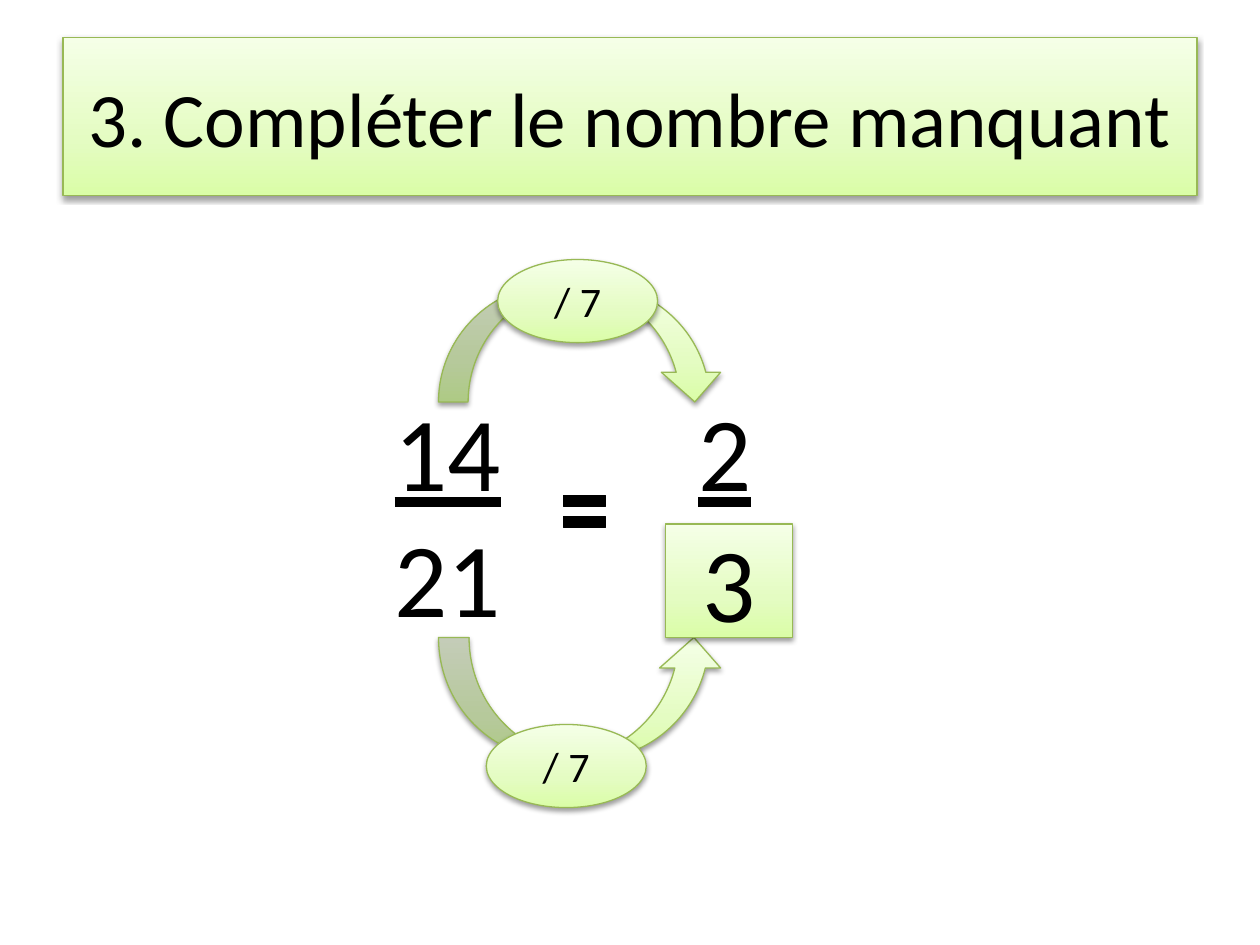
from copy import deepcopy

from lxml import etree
from pptx import Presentation
from pptx.dml.color import RGBColor
from pptx.enum import shapes, text
from pptx.oxml.ns import qn
from pptx.util import Pt

BLACK = RGBColor(0, 0, 0)
EDGE = RGBColor(0x98, 0xB9, 0x55)
GREENS = [
    (0, RGBColor(0xDA, 0xFD, 0xA7)),
    (0.35, RGBColor(0xE4, 0xFC, 0xC2)),
    (1, RGBColor(0xF5, 0xFF, 0xE7)),
]
FONT = "Calibri"
KIND = shapes.MSO_SHAPE


def shade(shape):
    """Give a shape the green gradient, thin edge and soft shadow."""
    shape.fill.gradient()
    shape.fill.gradient_angle = 90
    props = shape._element.spPr
    first = props.find(qn("a:gradFill")).find(qn("a:gsLst"))[0]
    first.addnext(deepcopy(first))
    for stop, (place, color) in zip(shape.fill.gradient_stops, GREENS):
        stop.position = place
        stop.color.rgb = color
    shape.line.color.rgb = EDGE
    shape.line.width = Pt(0.75)
    shape.shadow.inherit = False
    glow = etree.SubElement(
        props.find(qn("a:effectLst")), qn("a:outerShdw"),
        blurRad=str(Pt(3.1)), dist=str(Pt(1.6)), dir="5400000", rotWithShape="0")
    tint = etree.SubElement(glow, qn("a:srgbClr"), val=str(BLACK))
    etree.SubElement(tint, qn("a:alpha"), val="38000")


def write(shape, lines, size, under=False):
    """Write centred lines; the first may be underlined."""
    frame = shape.text_frame
    frame.word_wrap = True
    frame.text = "\n".join(lines)
    for row, para in enumerate(frame.paragraphs):
        para.alignment = text.PP_ALIGN.CENTER
        look = {"name": FONT, "size": Pt(size), "underline": under and row == 0}
        for key, value in look.items():
            setattr(para.runs[0].font, key, value)
        para.runs[0].font.color.rgb = BLACK


def draw(parent, kind, box, label=None, size=24):
    shape = parent.add_shape(kind, *map(Pt, box))
    shade(shape)
    if label:
        write(shape, [label], size)


def head(slide, box, label):
    title = slide.shapes.title
    for key, value in zip(("left", "top", "width", "height"), box):
        setattr(title, key, Pt(value))
    shade(title)
    title.text_frame.vertical_anchor = text.MSO_ANCHOR.MIDDLE
    write(title, [label], 44)


def step(slide, kind, box, shift, label):
    """Curved arrow with an oval label, shifted from the arrow's corner."""
    group = slide.shapes.add_group_shape().shapes
    draw(group, kind, box)
    draw(group, KIND.OVAL, (box[0] + shift[0], box[1] + shift[1], 91.4, 47.5), label)


def equate(slide, box, sides):
    """Number stacks at the ends of the box, with an equals sign between."""
    left, top, width, height = box
    wide = 127.4
    group = slide.shapes.add_group_shape().shapes
    for x, lines in zip((left, left + width - wide), sides):
        area = group.add_textbox(Pt(x), Pt(top), Pt(wide), Pt(height))
        write(area, lines, 60, under=True)
    sign = group.add_shape(
        KIND.MATH_EQUAL, Pt(left + 125.3), Pt(top + 49.7), Pt(33.1), Pt(50.4))
    sign.adjustments[0] = 0.12
    sign.adjustments[1] = 0.118
    sign.fill.solid()
    sign.fill.fore_color.rgb = BLACK
    sign.line.color.rgb = BLACK
    sign.line.width = Pt(0.75)
    sign.shadow.inherit = False


def main():
    deck = Presentation()
    deck.slide_width, deck.slide_height = Pt(720), Pt(540)
    slide = deck.slides.add_slide(deck.slide_layouts[5])
    head(slide, (36, 21.6, 648, 90), "3. Compléter le nombre manquant")
    step(slide, KIND.CURVED_UP_ARROW, (250.6, 364.3, 163.4, 69.8), (27.3, 49.7), "/ 7")
    step(slide, KIND.CURVED_DOWN_ARROW, (250.6, 162, 163.4, 67.7), (33.8, -13.7), "/ 7")
    equate(slide, (192.2, 217.4, 285.8, 152.6), [("14", "21"), ("2",)])
    draw(slide.shapes, KIND.RECTANGLE, (380.2, 299.5, 72.7, 64.8), "3", 60)
    deck.save("out.pptx")


if __name__ == "__main__":
    main()
